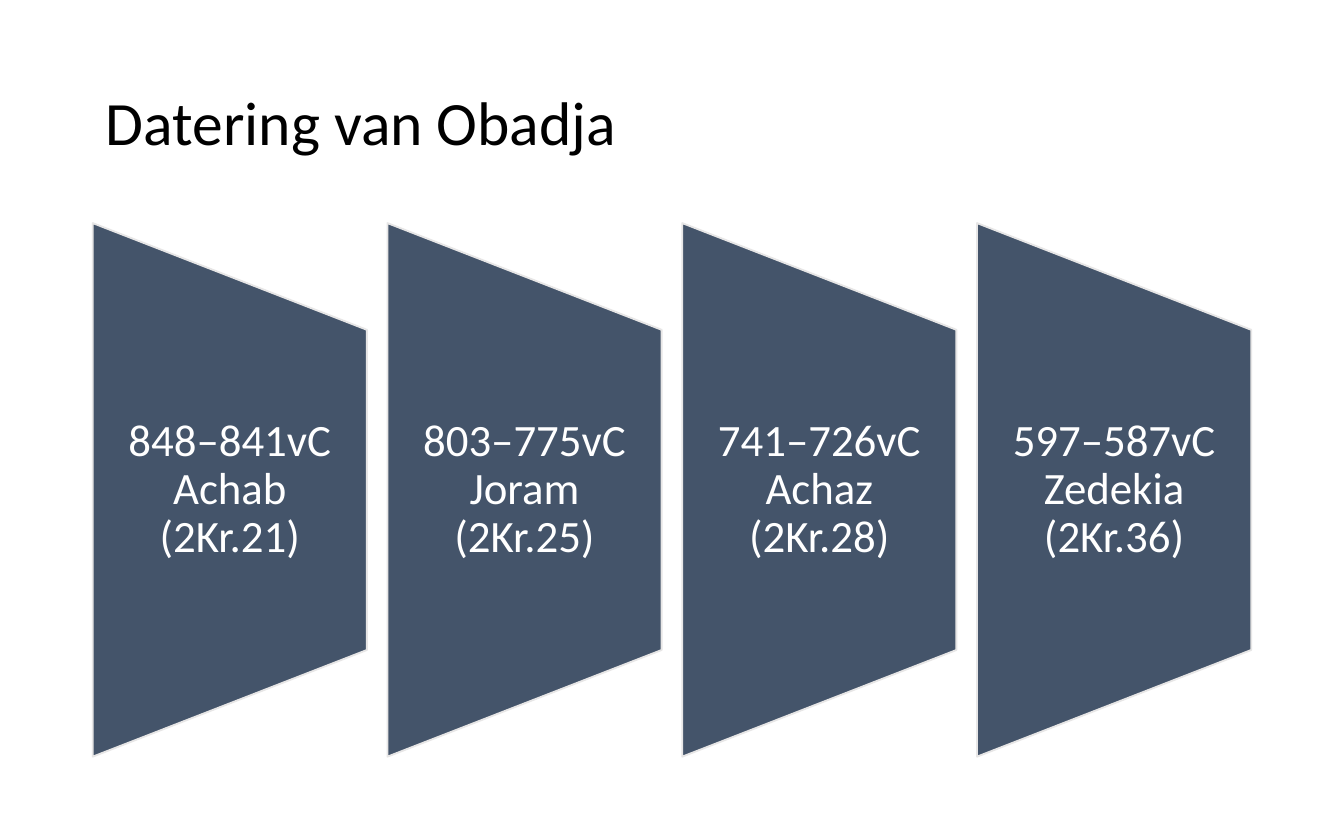
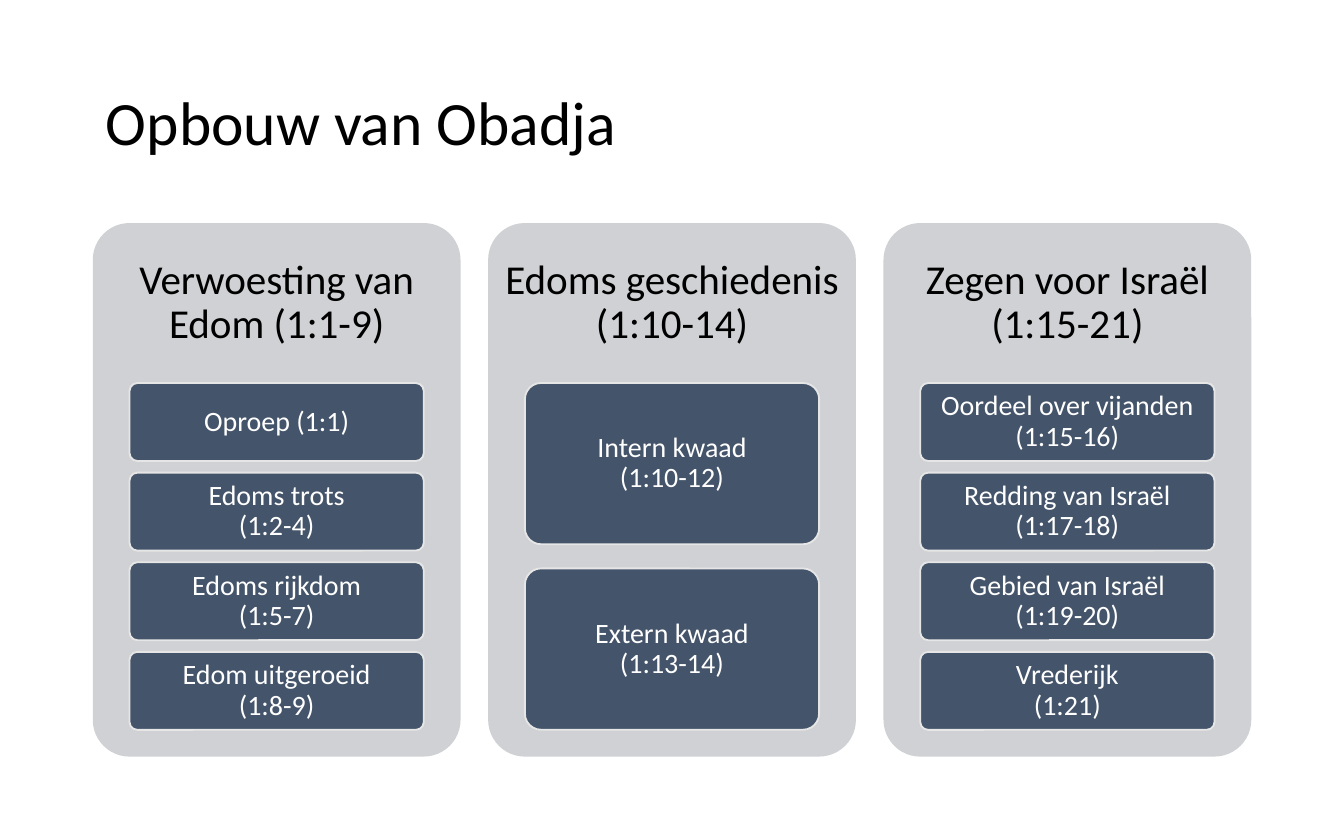
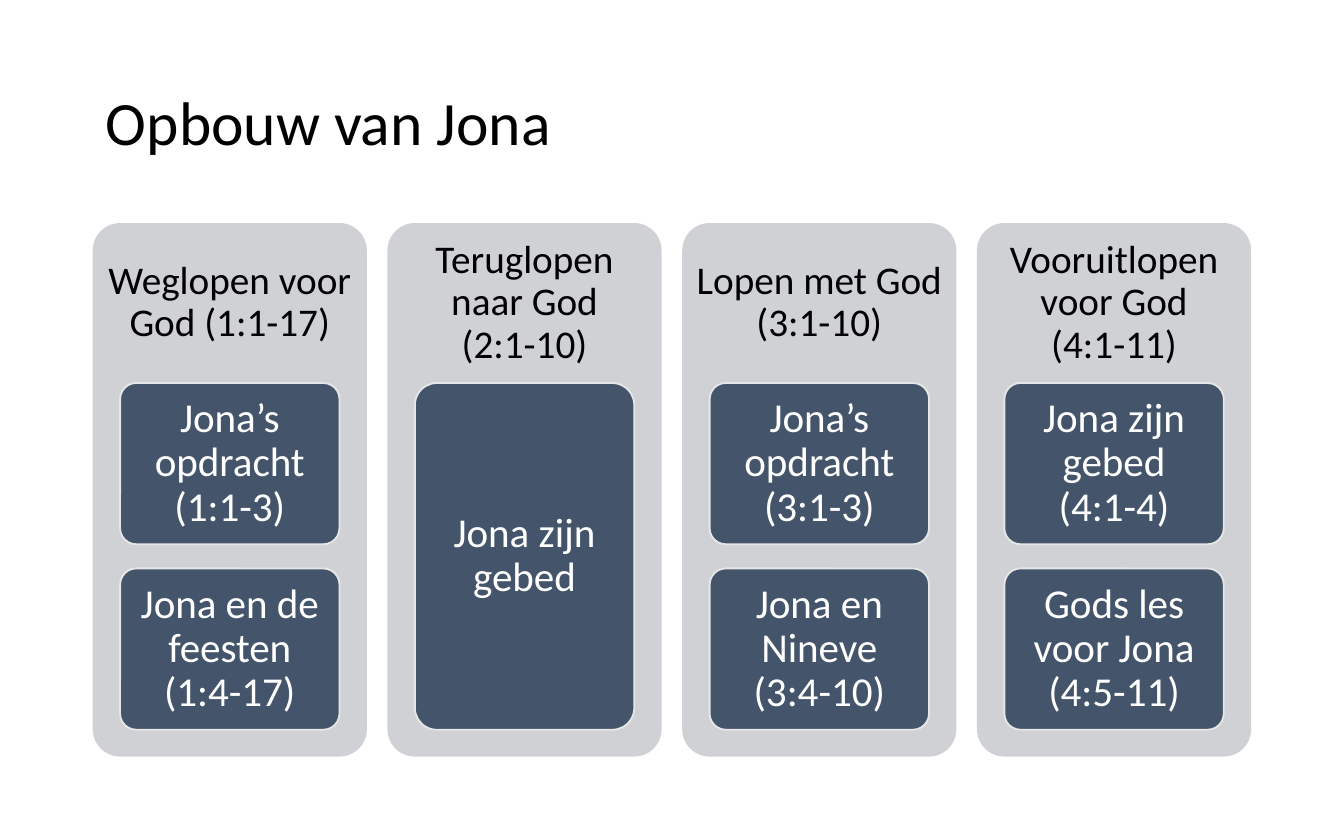
from pptx import Presentation
from pptx.dml.color import RGBColor
from pptx.enum.shapes import MSO_SHAPE
from pptx.enum.text import MSO_ANCHOR, PP_ALIGN
from pptx.util import Inches, Pt

FONT = "Calibri"
NAVY, PALE, PANEL, BLACK, WHITE = "44546A", "E7E6E6", "CFD1D4", "000000", "FFFFFF"
LEFT, WIDTH = 0.69, 8.62
TOP, HEIGHT = 1.66, 3.97
HEADING_HEIGHT = 1.19
CARDS_TOP, CARDS_HEIGHT = 2.85, 2.58
GAP = 0.15  # share of a card's height; columns use half of it

datings = ["848–841vC\nAchab\n(2Kr.21)", "803–775vC\nJoram\n(2Kr.25)",
           "741–726vC\nAchaz\n(2Kr.28)", "597–587vC\nZedekia\n(2Kr.36)"]

obadja_parts = [
    ("Verwoesting van Edom (1:1-9)",
     ["Oproep (1:1)", "Edoms trots\n(1:2-4)", "Edoms rijkdom\n(1:5-7)",
      "Edom uitgeroeid\n(1:8-9)"]),
    ("Edoms geschiedenis (1:10-14)",
     ["Intern kwaad\n(1:10-12)", "Extern kwaad\n(1:13-14)"]),
    ("Zegen voor Israël (1:15-21)",
     ["Oordeel over vijanden (1:15-16)", "Redding van Israël (1:17-18)",
      "Gebied van Israël\n(1:19-20)", "Vrederijk\n(1:21)"]),
]
jona_parts = [
    ("Weglopen voor God (1:1-17)",
     ["Jona’s opdracht (1:1-3)", "Jona en de feesten (1:4-17)"]),
    ("Teruglopen naar God\n(2:1-10)", ["Jona zijn gebed"]),
    ("Lopen met God (3:1-10)",
     ["Jona’s opdracht (3:1-3)", "Jona en Nineve (3:4-10)"]),
    ("Vooruitlopen voor God\n(4:1-11)",
     ["Jona zijn gebed\n(4:1-4)", "Gods les voor Jona (4:5-11)"]),
]

# title, columns, heading size, card text size, card insets (side, top and bottom)
slides = [
    ("Datering van Obadja", [(dating, []) for dating in datings], 24, None, None),
    ("Opbouw van Obadja", obadja_parts, 22, 15, (0.04, 0.03)),
    ("Opbouw van Jona", jona_parts, 21, 22, (0.06, 0.05)),
]


def write(shape, text, size, colour, insets, align=PP_ALIGN.CENTER):
    frame = shape.text_frame
    frame.word_wrap = True
    frame.vertical_anchor = MSO_ANCHOR.MIDDLE
    side, end = insets
    frame.margin_left = frame.margin_right = Inches(side)
    frame.margin_top = frame.margin_bottom = Inches(end)
    paragraph = frame.paragraphs[0]
    paragraph.text = text
    paragraph.alignment = align
    paragraph.line_spacing = 0.9
    paragraph.font.name = FONT
    paragraph.font.size = Pt(size)
    paragraph.font.color.rgb = RGBColor.from_string(colour)


def add_block(slide, preset, left, top, width, height, fill, line=None):
    block = slide.shapes.add_shape(
        preset, Inches(left), Inches(top), Inches(width), Inches(height))
    block.shadow.inherit = False
    block.fill.solid()
    block.fill.fore_color.rgb = RGBColor.from_string(fill)
    if line:
        block.line.color.rgb = RGBColor.from_string(line)
        block.line.width = Pt(1)
    else:
        block.line.fill.background()
    if preset == MSO_SHAPE.ROUNDED_RECTANGLE:
        block.adjustments[0] = 0.1
    return block


prs = Presentation()
prs.slide_width, prs.slide_height = Inches(10), Inches(6.25)

for title, columns, heading_size, card_size, card_insets in slides:
    slide = prs.slides.add_slide(prs.slide_layouts[6])
    title_box = slide.shapes.add_textbox(
        Inches(LEFT), Inches(0.33), Inches(WIDTH), Inches(1.21))
    write(title_box, title, 33, BLACK, (0.1, 0.05), PP_ALIGN.LEFT)

    column_width = WIDTH / (len(columns) + (len(columns) - 1) * GAP / 2)
    for index, (heading, cards) in enumerate(columns):
        left = LEFT + index * column_width * (1 + GAP / 2)
        if cards:
            add_block(slide, MSO_SHAPE.ROUNDED_RECTANGLE,
                      left, TOP, column_width, HEIGHT, PANEL)
            heading_top, heading_height = TOP, HEADING_HEIGHT
            heading_colour, heading_insets = BLACK, (0.09, 0.09)
        else:
            # The trapezoid is laid out lying down and turned about its centre
            trapezoid = add_block(
                slide, MSO_SHAPE.FLOWCHART_MANUAL_OPERATION,
                left + (column_width - HEIGHT) / 2, TOP + (HEIGHT - column_width) / 2,
                HEIGHT, column_width, NAVY, PALE)
            trapezoid.rotation = 270
            heading_top, heading_height = TOP + HEIGHT / 5, HEIGHT * 3 / 5
            heading_colour, heading_insets = WHITE, (0.17, 0)

        heading_box = slide.shapes.add_textbox(
            Inches(left), Inches(heading_top), Inches(column_width), Inches(heading_height))
        write(heading_box, heading, heading_size, heading_colour, heading_insets)

        card_height = CARDS_HEIGHT / (len(cards) + (len(cards) - 1) * GAP)
        for row, card_text in enumerate(cards):
            card = add_block(
                slide, MSO_SHAPE.ROUNDED_RECTANGLE, left + column_width * 0.1,
                CARDS_TOP + row * card_height * (1 + GAP),
                column_width * 0.8, card_height, NAVY, PALE)
            write(card, card_text, card_size, WHITE, card_insets)

prs.save("out.pptx")
